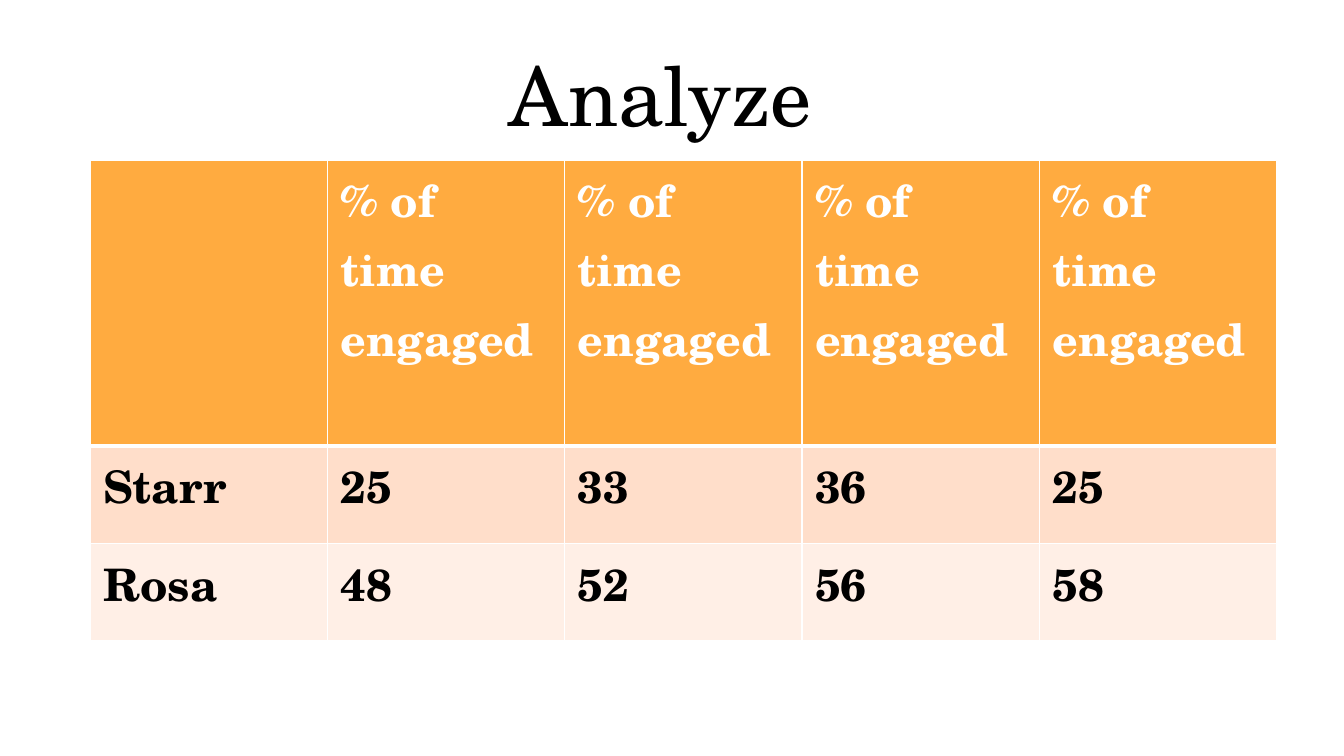
from pptx import Presentation
from pptx.dml.color import RGBColor
from pptx.enum import text
from pptx.oxml import parse_xml
from pptx.oxml.ns import nsdecls
from pptx.util import Cm, Pt

FONT = "TeX Gyre Schola"
BLACK, WHITE = "000000", "FFFFFF"
HEAD = "% of time engaged"
ROWS = [
    ["", HEAD, HEAD, HEAD, HEAD],
    ["Starr", "25", "33", "36", "25"],
    ["Rosa", "48", "52", "56", "58"],
]
# Height in cm, fill, text colour, bottom border in points
STYLES = [
    (5.41, "FFAB40", WHITE, 3),
    (1.84, "FFDECA", BLACK, 1),
    (1.84, "FFEFE6", BLACK, 1),
]


def color(code):
    return RGBColor.from_string(code)


def add_run(para, words, size, code, bold=False):
    run = para.add_run()
    run.text = words
    font = run.font
    font.name, font.size, font.bold = FONT, Pt(size), bold
    font.color.rgb = color(code)


def add_line(cell, side, width):
    cell._tc.get_or_add_tcPr().append(parse_xml(
        f'<a:ln{side} {nsdecls("a")} w="{Pt(width)}"><a:solidFill>'
        f'<a:srgbClr val="{WHITE}"/></a:solidFill></a:ln{side}>'))


def set_title(slide, left, top, width, height):
    title = slide.shapes.title
    title.left, title.top = Cm(left), Cm(top)
    title.width, title.height = Cm(width), Cm(height)
    frame = title.text_frame
    frame.word_wrap = True
    frame.auto_size = text.MSO_AUTO_SIZE.NONE
    frame.vertical_anchor = text.MSO_ANCHOR.MIDDLE
    para = frame.paragraphs[0]
    para.alignment = text.PP_ALIGN.CENTER
    para.line_spacing = 0.9
    add_run(para, "Analyze ", 44, BLACK)


def fill_cell(cell, words, fill, ink, above, below):
    # Borders come before the fill in the cell properties
    for side, width in (("L", 1), ("R", 1), ("T", above), ("B", below)):
        add_line(cell, side, width)
    cell.fill.solid()
    cell.fill.fore_color.rgb = color(fill)
    cell.margin_left = cell.margin_right = Cm(0.25)
    cell.margin_top = cell.margin_bottom = Cm(0.1)
    if words:
        add_run(cell.text_frame.paragraphs[0], words, 24, ink, True)


def add_grid(slide, left, top, width):
    count = len(ROWS[0])
    height = sum(style[0] for style in STYLES)
    grid = slide.shapes.add_table(
        len(ROWS), count, Cm(left), Cm(top), Cm(width), Cm(height)).table
    for col in grid.columns:
        col.width = Cm(width / count)
    above = 1
    for r, (row, style) in enumerate(zip(ROWS, STYLES)):
        tall, fill, ink, below = style
        grid.rows[r].height = Cm(tall)
        for c, words in enumerate(row):
            fill_cell(grid.cell(r, c), words, fill, ink, above, below)
        above = below


def main():
    deck = Presentation()
    deck.slide_width, deck.slide_height = Cm(25.4), Cm(14.29)
    slide = deck.slides.add_slide(deck.slide_layouts[5])
    # Heading
    set_title(slide, 1.75, 0.76, 21.9, 2.26)
    # Engagement table
    add_grid(slide, 1.7, 3.02, 22.43)
    deck.save("out.pptx")


if __name__ == "__main__":
    main()
